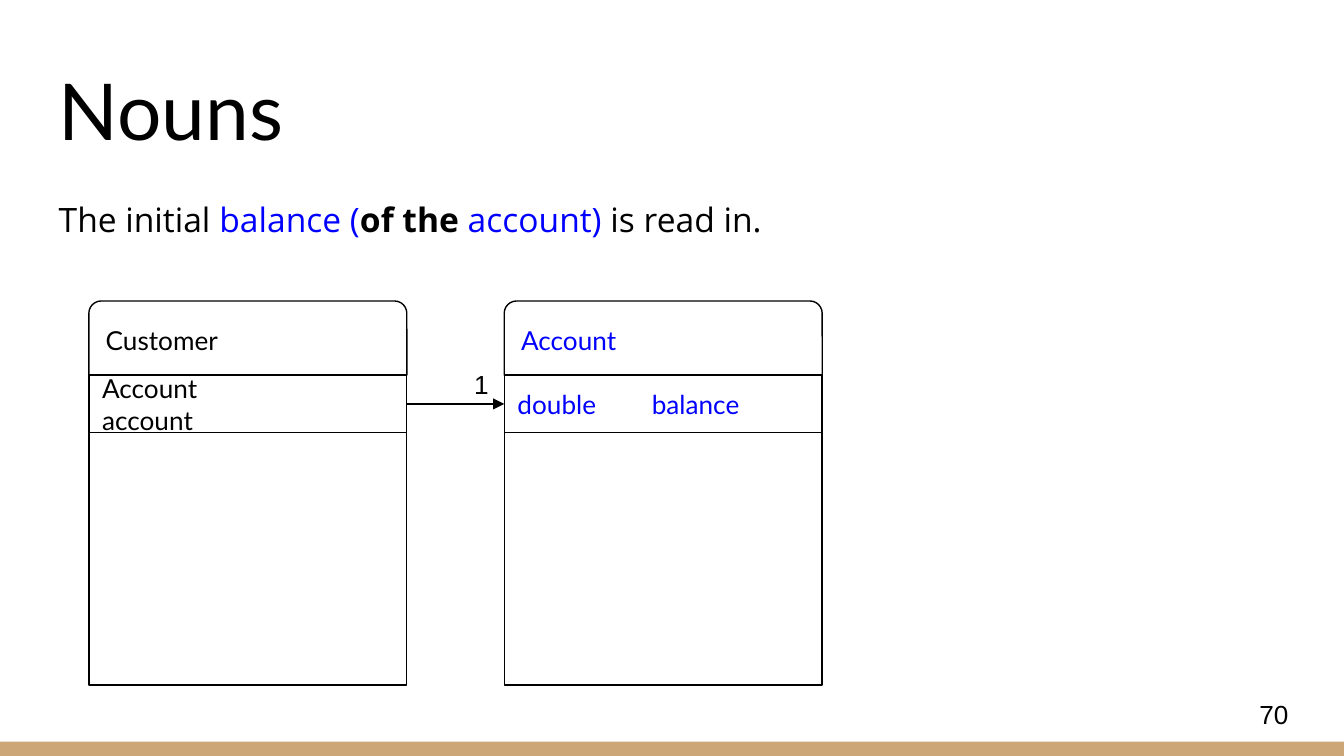
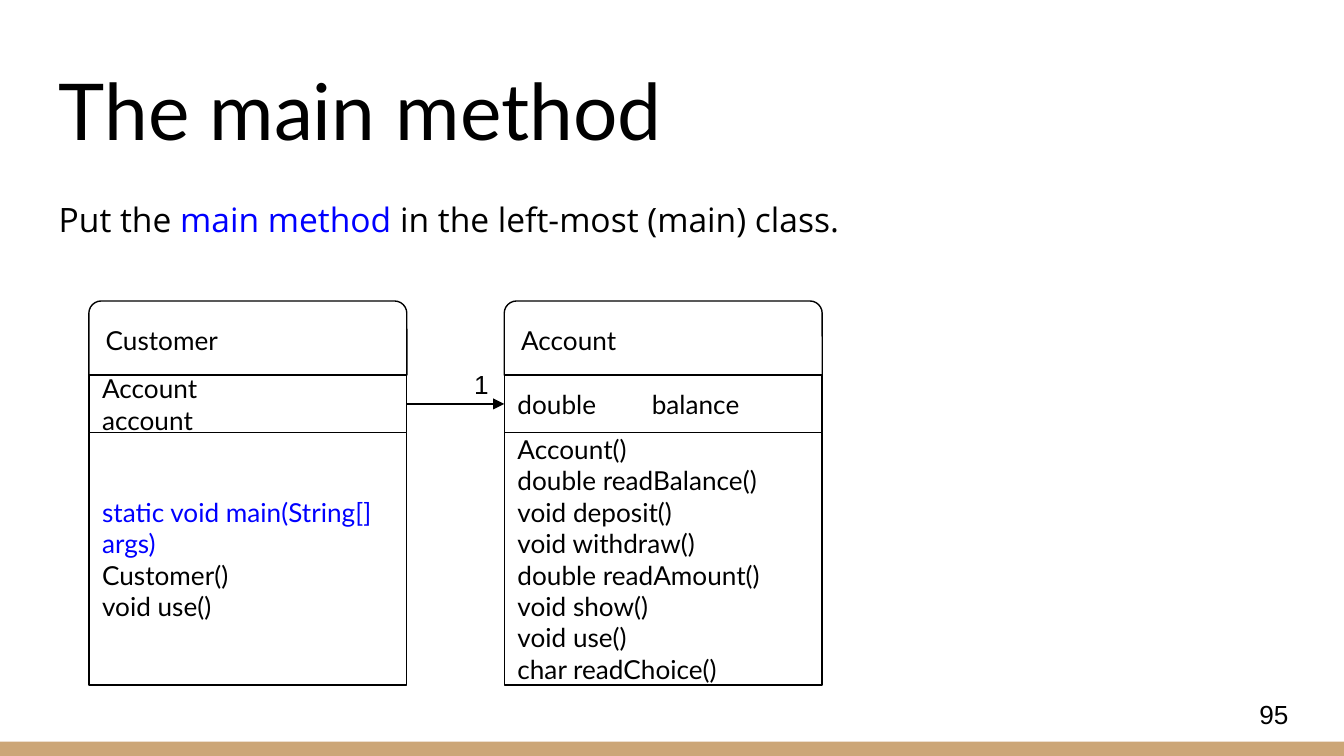
from lxml import etree
from pptx import Presentation
from pptx import util as u
from pptx.dml.color import RGBColor
from pptx.enum import shapes, text
from pptx.oxml import ns

BLACK, BLUE, WHITE, TAN = "000000", "0000FF", "FFFFFF", "CCA677"
HEADING, BODY, PLAIN = "Lato", "Open Sans", "Arial"
MIDDLE, BOTTOM, TOP = text.MSO_ANCHOR.MIDDLE, text.MSO_ANCHOR.BOTTOM, text.MSO_ANCHOR.TOP
RECTANGLE = shapes.MSO_SHAPE.RECTANGLE
ROUNDED_TOP = shapes.MSO_SHAPE.ROUND_2_SAME_RECTANGLE

WIDTH, HEIGHT = 25.4, 14.29
CLASS_WIDTH, CLASS_TOP = 6.01, 5.69
HEADER, FIELDS, METHODS = 1.4, 1.09, 4.77
CUSTOMER_LEFT, ACCOUNT_LEFT = 1.68, 9.53


def color(value):
    return RGBColor.from_string(value)


class ClassDeck:
    """Draws class diagram slides in one shared style."""

    def __init__(self):
        self.presentation = Presentation()
        self.presentation.slide_width = u.Cm(WIDTH)
        self.presentation.slide_height = u.Cm(HEIGHT)
        self.slide = None

    def new_slide(self, title, sentence, number):
        self.slide = self.presentation.slides.add_slide(self.presentation.slide_layouts[6])
        self.box(RECTANGLE, 0, 14.02, WIDTH, 0.27, fill=TAN, line=None)
        self.label(0.86, 0.89, 23.67, 2.31, [[(title, BLACK)]], HEADING, 42, BOTTOM)
        body = self.label(0.86, 3.4, 23.67, 9.32, [sentence], BODY, 18)
        paragraph = body.text_frame.paragraphs[0]
        paragraph.line_spacing = 1.15
        paragraph.space_after = u.Pt(16)
        self.label(23.55, 12.95, 1.52, 1.09, [[(number, BLACK)]], PLAIN, 14, MIDDLE)

    def add_lines(self, shape, lines, font, size, anchor):
        frame = shape.text_frame
        frame.word_wrap = True
        frame.vertical_anchor = anchor
        frame.margin_left = frame.margin_right = u.Cm(0.25)
        frame.margin_top = frame.margin_bottom = u.Cm(0.25)
        for index, line in enumerate(lines):
            paragraph = frame.add_paragraph() if index else frame.paragraphs[0]
            paragraph.alignment = text.PP_ALIGN.LEFT
            for words, ink, *bold in line:
                run = paragraph.add_run()
                run.text = words
                run.font.name = font
                run.font.size = u.Pt(size)
                run.font.bold = bool(bold)
                run.font.color.rgb = color(ink)

    def label(self, left, top, width, height, lines, font, size, anchor=TOP):
        shape = self.slide.shapes.add_textbox(*map(u.Cm, (left, top, width, height)))
        self.add_lines(shape, lines, font, size, anchor)
        return shape

    def box(self, kind, left, top, width, height, lines=(), fill=WHITE, line=BLACK):
        shape = self.slide.shapes.add_shape(kind, *map(u.Cm, (left, top, width, height)))
        shape.shadow.inherit = False
        shape.fill.solid()
        shape.fill.fore_color.rgb = color(fill)
        if line:
            shape.line.color.rgb = color(line)
            shape.line.width = u.Pt(0.75)
        else:
            shape.line.fill.background()
        if lines:
            self.add_lines(shape, lines, HEADING, 14, MIDDLE)

    def class_box(self, left, name, field, methods=(), ink=BLACK):
        top = CLASS_TOP
        parts = (
            (ROUNDED_TOP, HEADER, [[(name, ink)]]),
            (RECTANGLE, FIELDS, [[(field, ink)]]),
            (RECTANGLE, METHODS, [[method] for method in methods]),
        )
        for kind, height, lines in parts:
            self.box(kind, left, top, CLASS_WIDTH, height, lines)
            top += height

    def association(self, count):
        y = CLASS_TOP + HEADER + FIELDS / 2
        ends = (CUSTOMER_LEFT + CLASS_WIDTH, y, ACCOUNT_LEFT, y)
        arrow = self.slide.shapes.add_connector(shapes.MSO_CONNECTOR.STRAIGHT, *map(u.Cm, ends))
        arrow.line.color.rgb = color(BLACK)
        arrow.line.width = u.Pt(1.5)
        properties = arrow.element.spPr
        etree.SubElement(properties.get_or_add_ln(), ns.qn("a:tailEnd"), type="triangle")
        etree.SubElement(properties, ns.qn("a:effectLst"))
        self.label(8.71, 6.71, 0.81, 0.64, [[(count, BLACK)]], PLAIN, 14)

    def diagram(self, main_methods=(), account_methods=(), account_ink=BLACK):
        self.class_box(CUSTOMER_LEFT, "Customer", "Account\t\taccount", main_methods)
        self.class_box(ACCOUNT_LEFT, "Account", "double\tbalance", account_methods, account_ink)
        self.association("1")


def main():
    deck = ClassDeck()

    deck.new_slide("Nouns", [
        ("The initial ", BLACK),
        ("balance (", BLUE),
        ("of the", BLACK, True),
        (" account)", BLUE),
        (" is read in.", BLACK),
    ], "70")
    deck.diagram(account_ink=BLUE)

    deck.new_slide("The main method", [
        ("Put the ", BLACK),
        ("main method", BLUE),
        (" in the left-most (main) class.", BLACK),
    ], "95")
    account_methods = (
        "Account()", "double readBalance()", "void deposit()", "void withdraw()",
        "double readAmount()", "void show()", "void use()", "char readChoice()",
    )
    deck.diagram(
        [("static void main(String[] args)", BLUE), ("Customer()", BLACK), ("void use()", BLACK)],
        [(method, BLACK) for method in account_methods],
    )

    deck.presentation.save("out.pptx")


if __name__ == "__main__":
    main()
